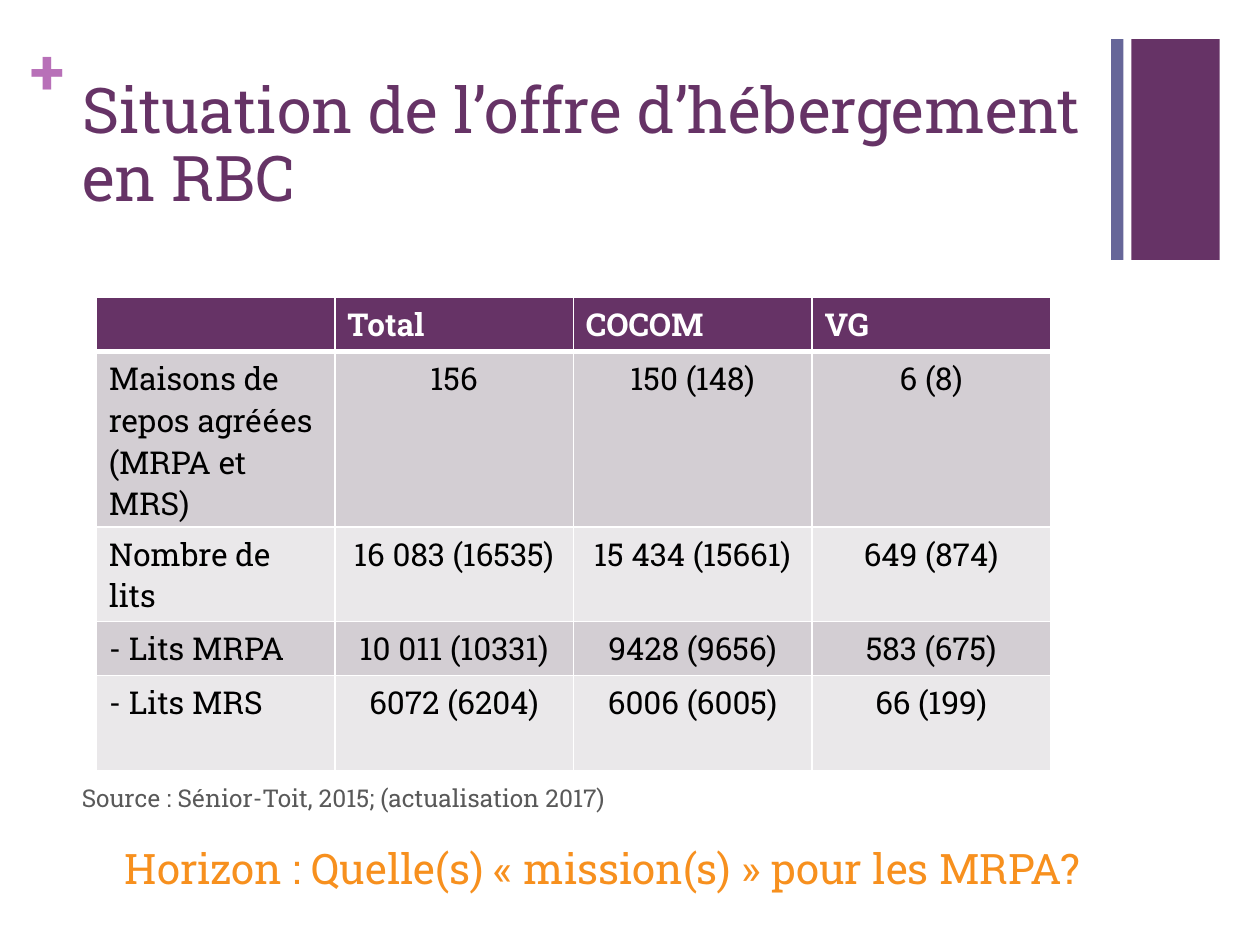
from dataclasses import dataclass

from lxml import etree
from pptx import Presentation
from pptx import util as u
from pptx.dml.color import RGBColor
from pptx.enum import shapes, text
from pptx.oxml import ns

Cm, Pt = u.Cm, u.Pt
LEFT, MID = text.PP_ALIGN.LEFT, text.PP_ALIGN.CENTER


@dataclass(frozen=True)
class Theme:
    font: str = "Roboto Slab"
    plum: str = "663366"
    slate: str = "666699"
    orchid: str = "B870B8"
    orange: str = "F7901E"
    grey: str = "595959"
    black: str = "000000"
    white: str = "FFFFFF"
    bands: tuple = ("D3CED3", "EAE8EA")
    head: int = 36
    lead: int = 24
    cell: int = 18
    note: int = 14


T = Theme()
ROWS = [
    ("", "Total", "COCOM", "VG"),
    ("Maisons de repos agréées (MRPA et MRS)", "156", "150 (148)", "6 (8)"),
    ("Nombre de lits", "16 083 (16535)", "15 434 (15661)", "649 (874)"),
    ("- Lits MRPA", "10 011 (10331)", "9428 (9656)", "583 (675)"),
    ("- Lits MRS", "6072 (6204)", "6006 (6005)", "66 (199)"),
]
HEIGHTS = (1.09, 3.53, 1.91, 1.09, 1.91)


def apply(obj, vals):
    for name, val in vals.items():
        setattr(obj, name, val)


def write(para, words, size, color, bold=False, **form):
    """Fill a paragraph with one run; form holds paragraph settings."""
    apply(para, form)
    run = para.add_run()
    run.text = words
    apply(run.font, {"name": T.font, "size": Pt(size), "bold": bold})
    run.font.color.rgb = RGBColor.from_string(color)


def paint(fill, color):
    fill.solid()
    fill.fore_color.rgb = RGBColor.from_string(color)


def add_bar(slide, left, width, color):
    bar = slide.shapes.add_shape(
        shapes.MSO_SHAPE.RECTANGLE, Cm(left), Cm(0.79), Cm(width), Cm(4.45))
    bar.shadow.inherit = False
    paint(bar.fill, color)
    bar.line.fill.background()


def add_box(slide, *place, **form):
    box = slide.shapes.add_textbox(*map(Cm, place))
    apply(box.text_frame, {"word_wrap": True, **form})
    return box.text_frame


def set_title(slide, words):
    title = slide.shapes.title
    apply(title, {"left": Cm(1.4), "top": Cm(1.35),
                  "width": Cm(20.98), "height": Cm(3.1)})
    frame = title.text_frame
    apply(frame, {"word_wrap": True, "auto_size": text.MSO_AUTO_SIZE.NONE,
                  "vertical_anchor": text.MSO_ANCHOR.TOP,
                  "margin_top": Cm(0.25)})
    write(frame.paragraphs[0], words, T.head, T.plum,
          alignment=LEFT, line_spacing=0.9)


def edge(cell, widths):
    """Draw white cell borders; widths maps a side (L, R, T, B) to points."""
    props = cell._tc.get_or_add_tcPr()
    for spot, (side, width) in enumerate(widths.items()):
        line = etree.Element(ns.qn(f"a:ln{side}"), w=str(Pt(width)))
        solid = etree.SubElement(line, ns.qn("a:solidFill"))
        etree.SubElement(solid, ns.qn("a:srgbClr"), val=T.white)
        props.insert(spot, line)


def add_grid(slide):
    cols = len(ROWS[0])
    grid = slide.shapes.add_table(
        len(ROWS), cols, Cm(1.94), Cm(6), Cm(19.24), Cm(sum(HEIGHTS))).table
    for col in grid.columns:
        col.width = Cm(19.24 / cols)
    for r, (row, high) in enumerate(zip(ROWS, HEIGHTS)):
        grid.rows[r].height = Cm(high)
        head = r == 0
        for c, words in enumerate(row):
            cell = grid.cell(r, c)
            paint(cell.fill, T.plum if head else T.bands[(r - 1) % 2])
            edge(cell, {"L": 1, "R": 1, "T": 3 if r == 1 else 1,
                        "B": 3 if head else 1})
            write(cell.text_frame.paragraphs[0], words, T.cell,
                  T.white if head else T.black, bold=head,
                  alignment=LEFT if head or c == 0 else MID)


def main():
    deck = Presentation()
    apply(deck, {"slide_width": Cm(25.4), "slide_height": Cm(19.05)})
    slide = deck.slides.add_slide(deck.slide_layouts[5])

    add_bar(slide, 22.81, 1.78, T.plum)
    add_bar(slide, 22.4, 0.25, T.slate)
    sides = ("left", "top", "right", "bottom")
    plus = add_box(slide, 0.61, 0.64, 0.74, 1.55,
                   **{f"margin_{side}": 0 for side in sides})
    write(plus.paragraphs[0], "+", T.head, T.orchid, bold=True)

    set_title(slide, "Situation de l’offre d’hébergement en RBC")
    add_grid(slide)

    notes = add_box(slide, 1.4, 15.67, 21.51, 2.85)
    write(notes.paragraphs[0], "Source : Sénior-Toit, 2015; (actualisation 2017)",
          T.note, T.grey)
    write(notes.add_paragraph(), "Horizon : Quelle(s) « mission(s) » pour les MRPA?",
          T.lead, T.orange, alignment=MID, space_before=Pt(17))

    deck.save("out.pptx")


if __name__ == "__main__":
    main()
